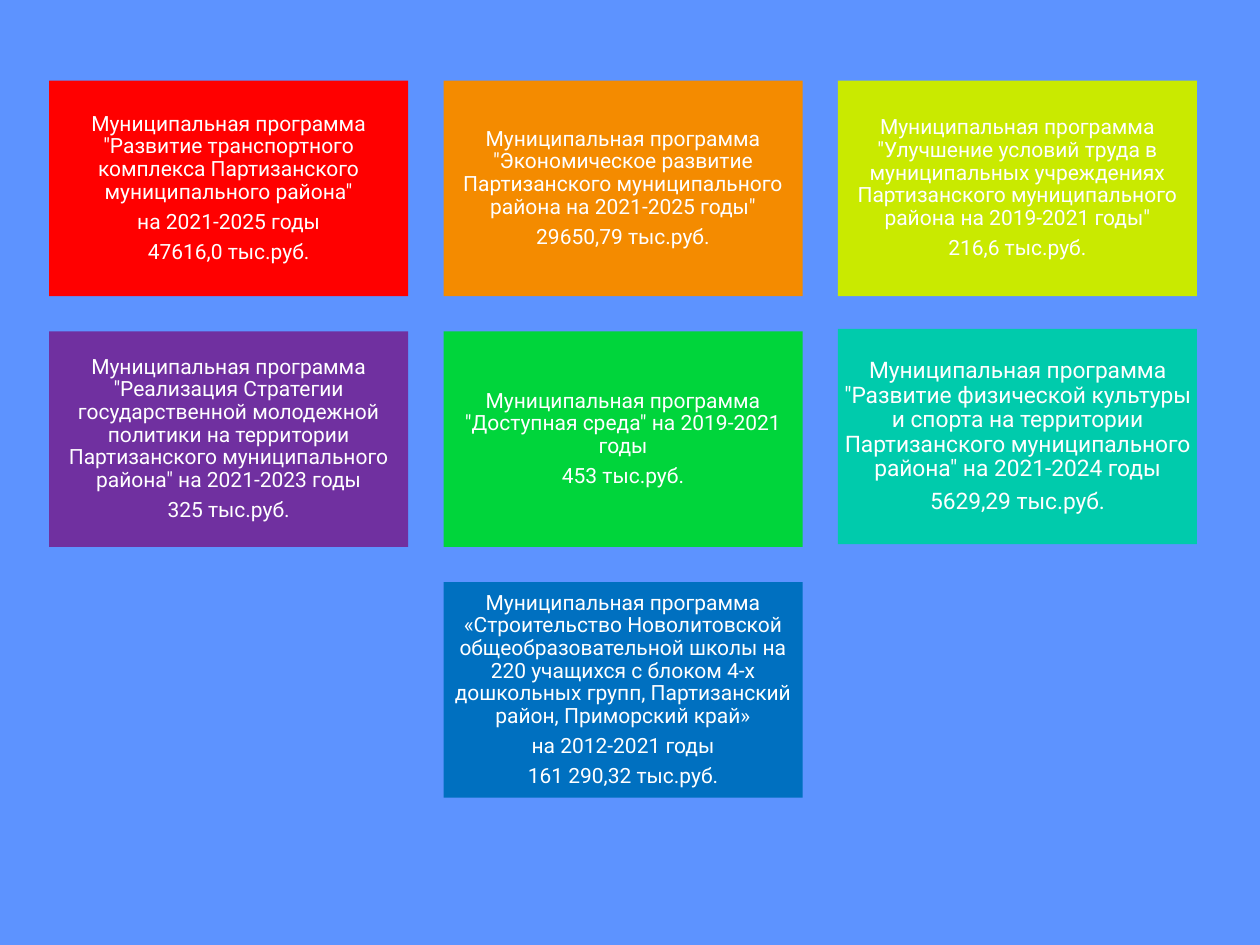
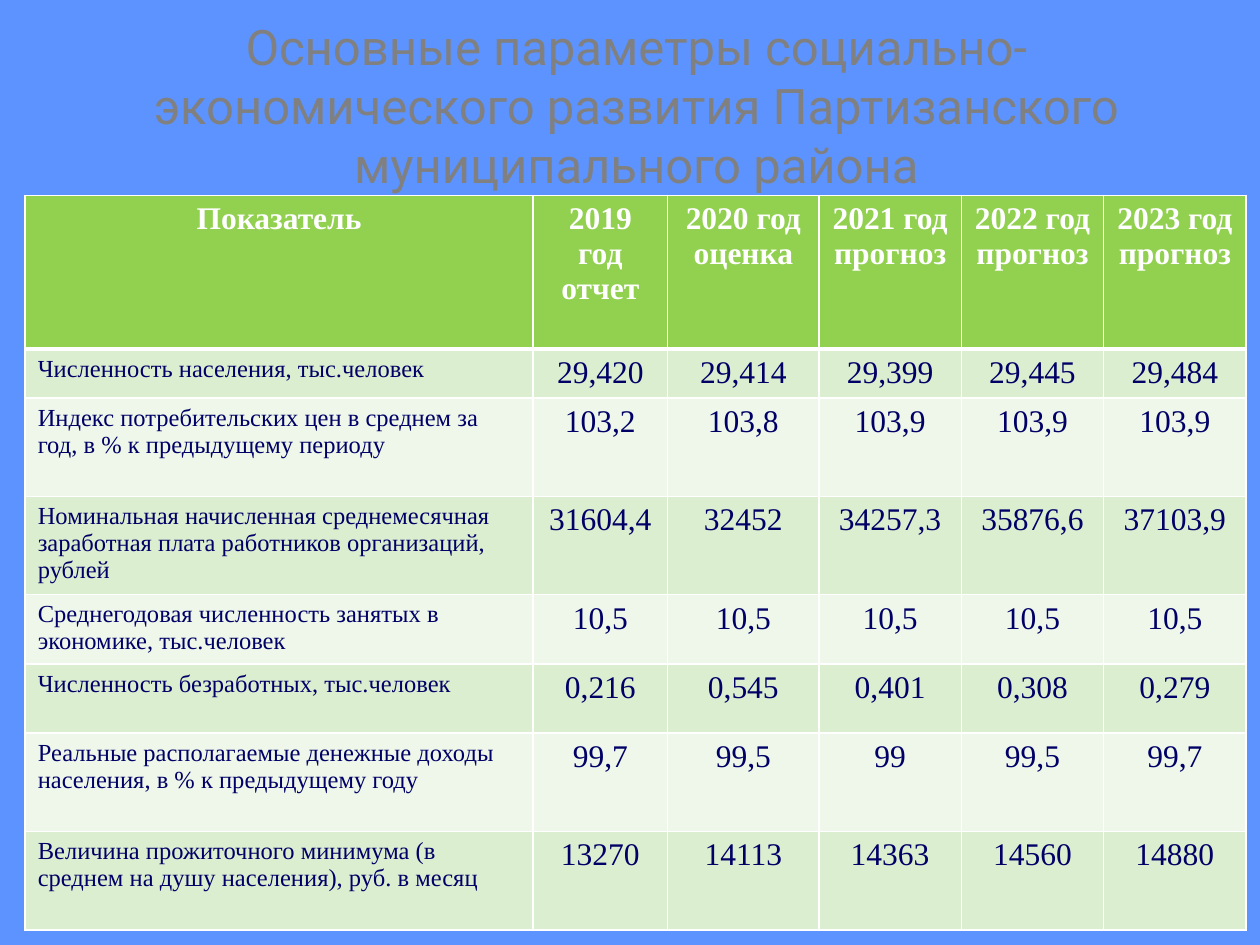
from lxml import etree
from pptx import Presentation, util as u
from pptx.dml.color import RGBColor
from pptx.enum import shapes, text
from pptx.oxml import ns

SKY = RGBColor(0x5D, 0x93, 0xFF)
WHITE = RGBColor(0xFF, 0xFF, 0xFF)
GRAY = RGBColor(0x80, 0x80, 0x80)
NAVY = RGBColor(0x00, 0x00, 0x66)
RED = RGBColor(0xFF, 0x00, 0x00)
ORANGE = RGBColor(0xF4, 0x8B, 0x00)
LIME = RGBColor(0xC9, 0xEA, 0x00)
PURPLE = RGBColor(0x70, 0x30, 0xA0)
GREEN = RGBColor(0x00, 0xD5, 0x3B)
TEAL = RGBColor(0x00, 0xCB, 0xAC)
BLUE = RGBColor(0x00, 0x70, 0xC0)
HEAD = RGBColor(0x92, 0xD0, 0x50)
BANDS = RGBColor(0xDC, 0xEE, 0xD0), RGBColor(0xEE, 0xF7, 0xE9)
SANS, SERIF = "Roboto", "Times New Roman"

# column, row, fill, size, upward shift, paragraphs
CARDS = [
    (0, 0, RED, 12, 0, [
        'Муниципальная программа "Развитие транспортного комплекса '
        'Партизанского муниципального района"',
        "на 2021-2025 годы", "47616,0 тыс.руб."]),
    (1, 0, ORANGE, 12, 0, [
        'Муниципальная программа "Экономическое развитие Партизанского '
        'муниципального района на 2021-2025 годы"', "29650,79 тыс.руб."]),
    (2, 0, LIME, 12, 0, [
        'Муниципальная программа "Улучшение условий труда в муниципальных '
        'учреждениях Партизанского муниципального района на 2019-2021 годы"',
        "216,6 тыс.руб."]),
    (0, 1, PURPLE, 12, 0, [
        'Муниципальная программа "Реализация Стратегии государственной '
        'молодежной политики на территории Партизанского муниципального '
        'района" на 2021-2023 годы', "325 тыс.руб."]),
    (1, 1, GREEN, 12, 0, [
        'Муниципальная программа "Доступная среда" на 2019-2021 годы',
        "453 тыс.руб."]),
    (2, 1, TEAL, 13, 0.02, [
        'Муниципальная программа "Развитие физической культуры и спорта на '
        'территории Партизанского муниципального района" на 2021-2024 годы',
        "5629,29 тыс.руб."]),
    (1, 2, BLUE, 12, 0, [
        "Муниципальная программа «Строительство Новолитовской "
        "общеобразовательной школы на 220 учащихся с блоком 4-х дошкольных "
        "групп, Партизанский район, Приморский край»",
        "на 2012-2021 годы", "161 290,32 тыс.руб."]),
]
LEFT, TOP, WIDE, HIGH, GAP = 0.39, 0.64, 2.85, 1.71, 0.28

TITLE = ("Основные параметры социально-экономического развития "
         "Партизанского муниципального района")
ROWS = [
    ["Показатель", "2019 год\nотчет", "2020 год\nоценка", "2021 год\nпрогноз",
     "2022 год прогноз", "2023 год прогноз"],
    ["Численность населения, тыс.человек",
     "29,420", "29,414", "29,399", "29,445", "29,484"],
    ["Индекс потребительских цен в среднем за год, в % к предыдущему периоду",
     "103,2", "103,8", "103,9", "103,9", "103,9"],
    ["Номинальная начисленная среднемесячная заработная плата работников "
     "организаций, рублей",
     "31604,4", "32452", "34257,3", "35876,6", "37103,9"],
    ["Среднегодовая численность занятых в экономике, тыс.человек",
     "10,5", "10,5", "10,5", "10,5", "10,5"],
    ["Численность безработных, тыс.человек",
     "0,216", "0,545", "0,401", "0,308", "0,279"],
    ["Реальные располагаемые денежные доходы населения, в % к предыдущему году",
     "99,7", "99,5", "99", "99,5", "99,7"],
    ["Величина прожиточного минимума (в среднем на душу населения), "
     "руб. в месяц",
     "13270", "14113", "14363", "14560", "14880"],
]
WIDTHS = [4.03, 1.07, 1.2, 1.13, 1.13, 1.13]
HEIGHTS = [1.22, 0.39, 0.78, 0.78, 0.55, 0.55, 0.78, 0.78]


def write(frame, paras, size, color, font=SANS, bold=False, center=True,
          line=None, after=None):
    for i, words in enumerate(paras):
        para = frame.paragraphs[0] if i == 0 else frame.add_paragraph()
        run = para.add_run()
        run.text = words
        run.font.size, run.font.name, run.font.bold = u.Pt(size), font, bold
        run.font.color.rgb = color
        para.alignment = text.PP_ALIGN.CENTER if center else text.PP_ALIGN.LEFT
        para.line_spacing = line
        para.space_after = after


def place(shape, *box):
    shape.left, shape.top, shape.width, shape.height = map(u.Inches, box)


def card(slide, col, row, fill, size, lift, paras):
    box = slide.shapes.add_shape(shapes.MSO_SHAPE.RECTANGLE, 0, 0, 0, 0)
    place(box, LEFT + col * (WIDE + GAP), TOP + row * (HIGH + GAP) - lift,
          WIDE, HIGH)
    box.shadow.inherit = False
    box.fill.solid()
    box.fill.fore_color.rgb = fill
    box.line.fill.background()
    frame = box.text_frame
    frame.word_wrap = True
    frame.vertical_anchor = text.MSO_ANCHOR.MIDDLE
    frame.margin_left = frame.margin_right = u.Inches(0.05)
    frame.margin_top = frame.margin_bottom = u.Inches(0.05)
    write(frame, paras, size, WHITE, line=0.9, after=u.Pt(0.35 * size))


def border(cell, top, bottom):
    """Draw white cell edges; top and bottom are widths in points."""
    props = cell._tc.get_or_add_tcPr()
    edges = {"lnL": 1, "lnR": 1, "lnT": top, "lnB": bottom}
    for i, (tag, width) in enumerate(edges.items()):
        edge = etree.Element(ns.qn("a:" + tag), w=str(u.Pt(width)))
        fill = etree.SubElement(edge, ns.qn("a:solidFill"))
        etree.SubElement(fill, ns.qn("a:srgbClr"), val=str(WHITE))
        props.insert(i, edge)


def grid(slide):
    table = slide.shapes.add_table(
        len(ROWS), len(WIDTHS), u.Inches(0.2), u.Inches(1.55),
        u.Inches(sum(WIDTHS)), u.Inches(sum(HEIGHTS))).table
    for col, width in zip(table.columns, WIDTHS):
        col.width = u.Inches(width)
    for r, (words, high) in enumerate(zip(ROWS, HEIGHTS)):
        table.rows[r].height = u.Inches(high)
        head = r == 0
        for c, word in enumerate(words):
            cell = table.cell(r, c)
            cell.fill.solid()
            cell.fill.fore_color.rgb = HEAD if head else BANDS[(r - 1) % 2]
            border(cell, 3 if r == 1 else 1, 3 if head else 1)
            write(cell.text_frame, word.split("\n"),
                  18 if head or c else 14, WHITE if head else NAVY,
                  font=SERIF, bold=head, center=head or c > 0)


def main():
    deck = Presentation()
    deck.slide_width, deck.slide_height = u.Inches(10), u.Inches(7.5)
    back = deck.slide_master.background.fill
    back.solid()
    back.fore_color.rgb = SKY

    slide = deck.slides.add_slide(deck.slide_layouts[6])
    for item in CARDS:
        card(slide, *item)

    slide = deck.slides.add_slide(deck.slide_layouts[5])
    title = slide.shapes.title
    place(title, 0.55, 0.08, 9, 1.51)
    title.text_frame.auto_size = text.MSO_AUTO_SIZE.NONE
    title.text_frame.vertical_anchor = text.MSO_ANCHOR.MIDDLE
    write(title.text_frame, [TITLE], 28, GRAY)
    grid(slide)
    deck.save("out.pptx")


if __name__ == "__main__":
    main()
